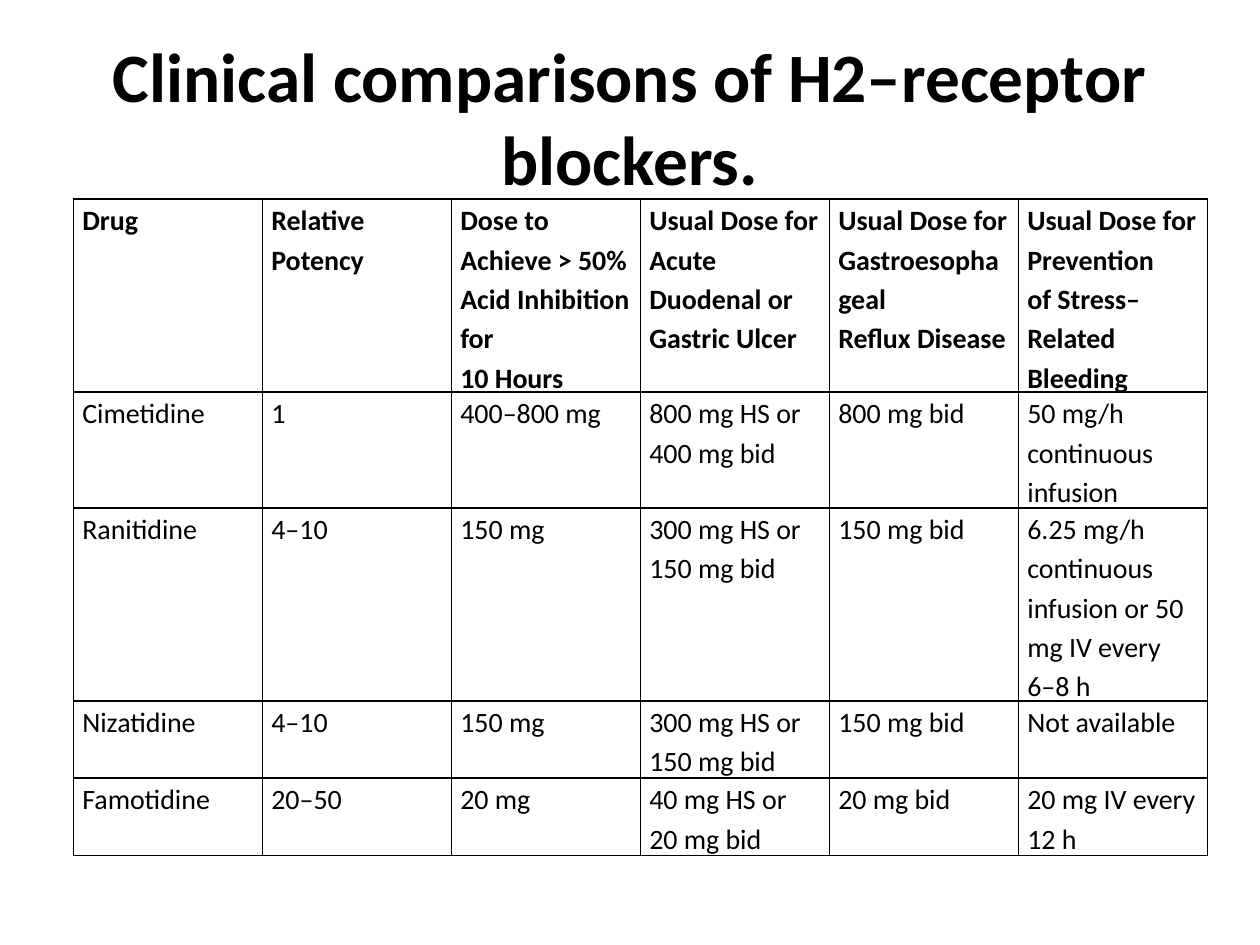
"""Build a slide comparing the clinical use of H2-receptor blockers."""
from dataclasses import astuple, dataclass

from lxml import etree
from pptx import Presentation
from pptx.dml.color import RGBColor
from pptx.enum import text
from pptx.oxml import ns
from pptx.util import Cm, Pt

BLACK = RGBColor(0, 0, 0)
WHITE = RGBColor(255, 255, 255)
FONT_NAME = "Calibri"
COLUMN_WIDTH = Cm(3.81)
ROW_HEIGHTS = (Cm(2.34), Cm(1.7), Cm(2.95), Cm(1.27), Cm(1.45))
SIDE_MARGIN = Cm(0.18)
BORDER_WIDTH = Pt(1)


@dataclass(frozen=True)
class Drug:
    """One table row, with a line break between paragraphs of a cell."""

    name: str
    potency: str
    inhibition_dose: str
    ulcer_dose: str
    reflux_dose: str
    bleeding_dose: str


ROWS = (
    Drug("Drug", "Relative\nPotency",
         "Dose to Achieve > 50%\nAcid Inhibition for\n10 Hours",
         "Usual Dose for\nAcute Duodenal or\nGastric Ulcer",
         "Usual Dose for\nGastroesophageal\nReflux Disease",
         "Usual Dose for Prevention\nof Stress–Related\nBleeding"),
    Drug("Cimetidine", "1", "400–800 mg", "800 mg HS or\n400 mg bid",
         "800 mg bid", "50 mg/h continuous\ninfusion"),
    Drug("Ranitidine", "4–10", "150 mg", "300 mg HS or\n150 mg bid",
         "150 mg bid",
         "6.25 mg/h continuous\ninfusion or 50 mg IV every\n6–8 h"),
    Drug("Nizatidine", "4–10", "150 mg", "300 mg HS or\n150 mg bid",
         "150 mg bid", "Not available"),
    Drug("Famotidine", "20–50", "20 mg", "40 mg HS or\n20 mg bid",
         "20 mg bid", "20 mg IV every 12 h"),
)


def add_run(paragraph, content: str, size: float, bold: bool) -> None:
    """Add one black run to a paragraph."""
    run = paragraph.add_run()
    run.text = content
    run.font.name = FONT_NAME
    run.font.size = Pt(size)
    run.font.bold = bold
    run.font.color.rgb = BLACK


def add_title(slide, content: str) -> None:
    """Add the centred heading."""
    shape = slide.shapes.add_textbox(Cm(1.27), Cm(0.76), Cm(22.86), Cm(3.18))
    frame = shape.text_frame
    frame.word_wrap = True
    frame.vertical_anchor = text.MSO_ANCHOR.MIDDLE
    paragraph = frame.paragraphs[0]
    paragraph.alignment = text.PP_ALIGN.CENTER
    add_run(paragraph, content, 39.6, True)


def set_borders(cell) -> None:
    """Draw a solid black line on each side of a cell."""
    properties = cell._tc.get_or_add_tcPr()
    for position, side in enumerate(("lnL", "lnR", "lnT", "lnB")):
        line = etree.Element(ns.qn(f"a:{side}"), w=str(BORDER_WIDTH))
        fill = etree.SubElement(line, ns.qn("a:solidFill"))
        etree.SubElement(fill, ns.qn("a:srgbClr"), val=str(BLACK))
        properties.insert(position, line)


def fill_cell(cell, content: str, bold: bool) -> None:
    """Write and format one table cell."""
    cell.margin_left = cell.margin_right = SIDE_MARGIN
    cell.margin_top = cell.margin_bottom = 0
    cell.fill.solid()
    cell.fill.fore_color.rgb = WHITE
    set_borders(cell)
    frame = cell.text_frame
    for index, line in enumerate(content.split("\n")):
        paragraph = frame.add_paragraph() if index else frame.paragraphs[0]
        paragraph.line_spacing = 1.15
        add_run(paragraph, line, 16, bold)


def add_drug_table(slide, rows: tuple[Drug, ...]) -> None:
    """Add the comparison table with a bold heading row."""
    column_count = len(astuple(rows[0]))
    table = slide.shapes.add_table(
        len(rows), column_count, Cm(1.48), Cm(4.01),
        COLUMN_WIDTH * column_count, sum(ROW_HEIGHTS)).table
    for column in table.columns:
        column.width = COLUMN_WIDTH
    for row_index, (drug, height) in enumerate(zip(rows, ROW_HEIGHTS)):
        table.rows[row_index].height = height
        for column_index, content in enumerate(astuple(drug)):
            fill_cell(table.cell(row_index, column_index), content,
                      row_index == 0)


def main() -> None:
    """Create and save the presentation."""
    presentation = Presentation()
    presentation.slide_width = Cm(25.4)
    presentation.slide_height = Cm(19.05)
    slide = presentation.slides.add_slide(presentation.slide_layouts[6])
    add_title(slide, "Clinical comparisons of H2–receptor blockers.")
    add_drug_table(slide, ROWS)
    presentation.save("out.pptx")


if __name__ == "__main__":
    main()
